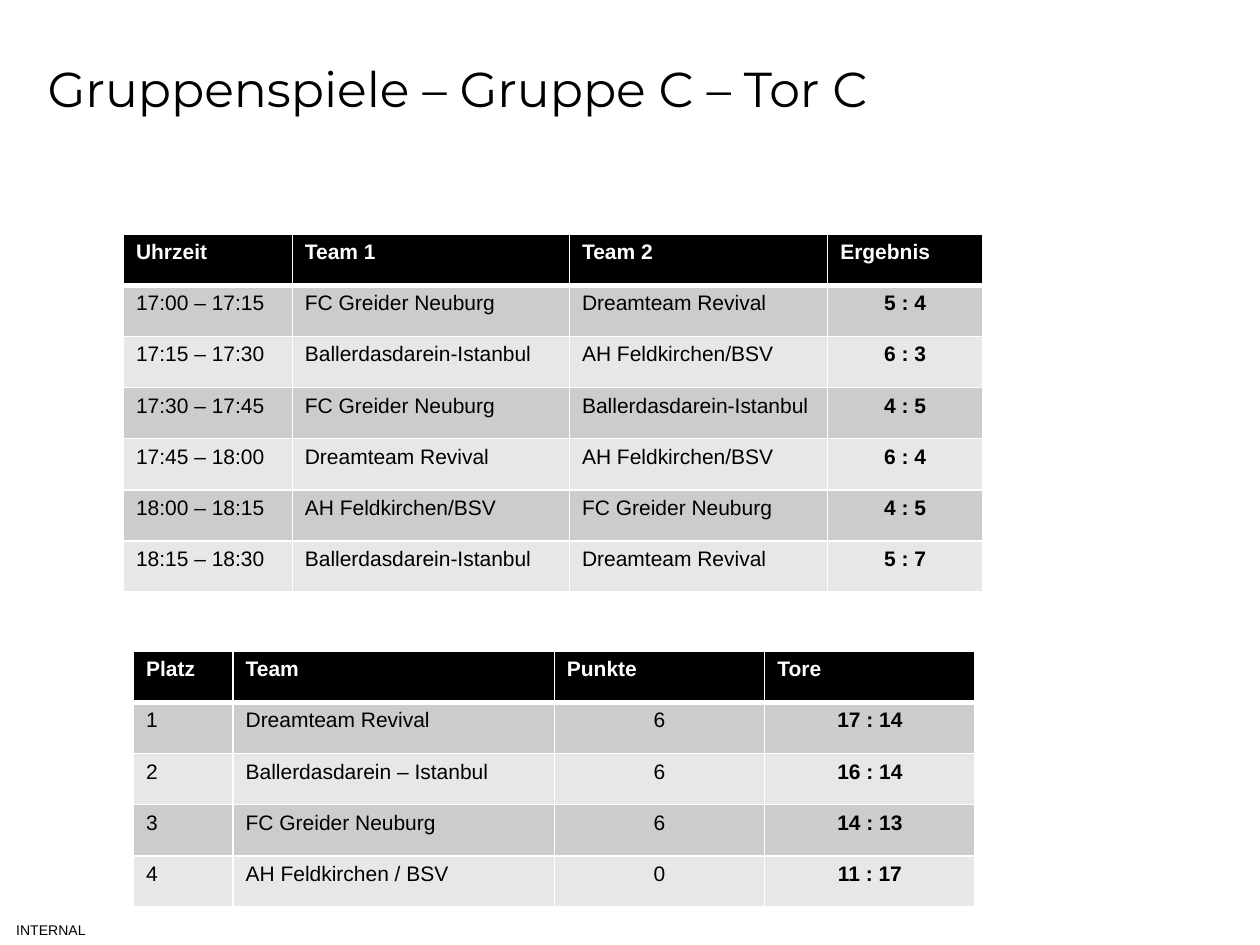
import pptx
import pptx.dml.color
import pptx.enum.text
import pptx.oxml.ns
import pptx.util
from dataclasses import dataclass
from lxml import etree

Inches = pptx.util.Inches
Pt = pptx.util.Pt
RGBColor = pptx.dml.color.RGBColor
ALIGN = pptx.enum.text.PP_ALIGN
ANCHOR = pptx.enum.text.MSO_ANCHOR


@dataclass(frozen=True)
class Theme:
    black: str = "000000"
    white: str = "FFFFFF"
    bands: tuple = ("CCCCCC", "E7E7E7")
    title_font: str = "Montserrat"
    body_font: str = "Arial"
    title_size: int = 28
    table_size: int = 12
    label_size: int = 8
    rule: int = 1
    header_rule: int = 3


THEME = Theme()
ROW_HEIGHT = 2.84 / 7

MATCHES = [
    ("Uhrzeit", "Team 1", "Team 2", "Ergebnis"),
    ("17:00 – 17:15", "FC Greider Neuburg", "Dreamteam Revival", "5 : 4"),
    ("17:15 – 17:30", "Ballerdasdarein-Istanbul", "AH Feldkirchen/BSV", "6 : 3"),
    ("17:30 – 17:45", "FC Greider Neuburg", "Ballerdasdarein-Istanbul", "4 : 5"),
    ("17:45 – 18:00", "Dreamteam Revival", "AH Feldkirchen/BSV", "6 : 4"),
    ("18:00 – 18:15", "AH Feldkirchen/BSV", "FC Greider Neuburg", "4 : 5"),
    ("18:15 – 18:30", "Ballerdasdarein-Istanbul", "Dreamteam Revival", "5 : 7"),
]

STANDINGS = [
    ("Platz", "Team", "Punkte", "Tore"),
    ("1", "Dreamteam Revival", "6", "17 : 14"),
    ("2", "Ballerdasdarein – Istanbul", "6", "16 : 14"),
    ("3", "FC Greider Neuburg", "6", "14 : 13"),
    ("4", "AH Feldkirchen / BSV", "0", "11 : 17"),
]


def add_run(p, text, font, size, color=THEME.black, bold=False):
    r = p.add_run()
    r.text = text
    r.font.name = font
    r.font.size = Pt(size)
    r.font.bold = bold
    r.font.color.rgb = RGBColor.from_string(color)


def add_text(s, box, text, font, size, align=ALIGN.LEFT, inset=None):
    tf = s.shapes.add_textbox(*map(Inches, box)).text_frame
    tf.word_wrap = True
    tf.vertical_anchor = ANCHOR.MIDDLE
    if inset is not None:
        tf.margin_left = tf.margin_right = Inches(inset)
        tf.margin_top = tf.margin_bottom = Inches(inset)
    p = tf.paragraphs[0]
    p.alignment = align
    add_run(p, text, font, size)


def set_borders(cell, top, bottom):
    """Draw white cell borders; the side rules are always thin."""
    qn = pptx.oxml.ns.qn
    tcPr = cell._tc.get_or_add_tcPr()
    widths = {"lnL": THEME.rule, "lnR": THEME.rule, "lnT": top, "lnB": bottom}
    for i, (tag, width) in enumerate(widths.items()):
        ln = etree.Element(qn(f"a:{tag}"), w=str(Pt(width)))
        fill = etree.SubElement(ln, qn("a:solidFill"))
        etree.SubElement(fill, qn("a:srgbClr"), val=THEME.white)
        tcPr.insert(i, ln)


def add_table(s, left, top, widths, rows, centred):
    """Add a banded table: black header, last column bold."""
    table = s.shapes.add_table(
        len(rows), len(widths), Inches(left), Inches(top),
        Inches(sum(widths)), Inches(ROW_HEIGHT * len(rows))).table
    for column, width in zip(table.columns, widths):
        column.width = Inches(width)
    for i, values in enumerate(rows):
        header = i == 0
        table.rows[i].height = Inches(ROW_HEIGHT)
        for j, text in enumerate(values):
            cell = table.cell(i, j)
            cell.fill.solid()
            cell.fill.fore_color.rgb = RGBColor.from_string(
                THEME.black if header else THEME.bands[(i - 1) % 2])
            set_borders(cell,
                        THEME.header_rule if i == 1 else THEME.rule,
                        THEME.header_rule if header else THEME.rule)
            p = cell.text_frame.paragraphs[0]
            if j in centred and not header:
                p.alignment = ALIGN.CENTER
            add_run(p, text, THEME.body_font, THEME.table_size,
                    THEME.white if header else THEME.black,
                    header or j == len(values) - 1)


def main():
    prs = pptx.Presentation()
    prs.slide_width, prs.slide_height = Inches(10), Inches(7.5)
    s = prs.slides.add_slide(prs.slide_layouts[6])

    # Classification label and title
    add_text(s, (0, 7.26, 0.81, 0.24), "INTERNAL", THEME.body_font,
             THEME.label_size, ALIGN.CENTER, inset=0)
    add_text(s, (0.28, 0.01, 7.87, 1.37), "Gruppenspiele – Gruppe C – Tor C",
             THEME.title_font, THEME.title_size)

    # Match results and group standings
    add_table(s, 0.98, 1.86, (1.34, 2.2, 2.05, 1.23), MATCHES, centred={3})
    add_table(s, 1.06, 5.17, (0.79, 2.55, 1.67, 1.67), STANDINGS, centred={2, 3})

    prs.save("out.pptx")


if __name__ == "__main__":
    main()
